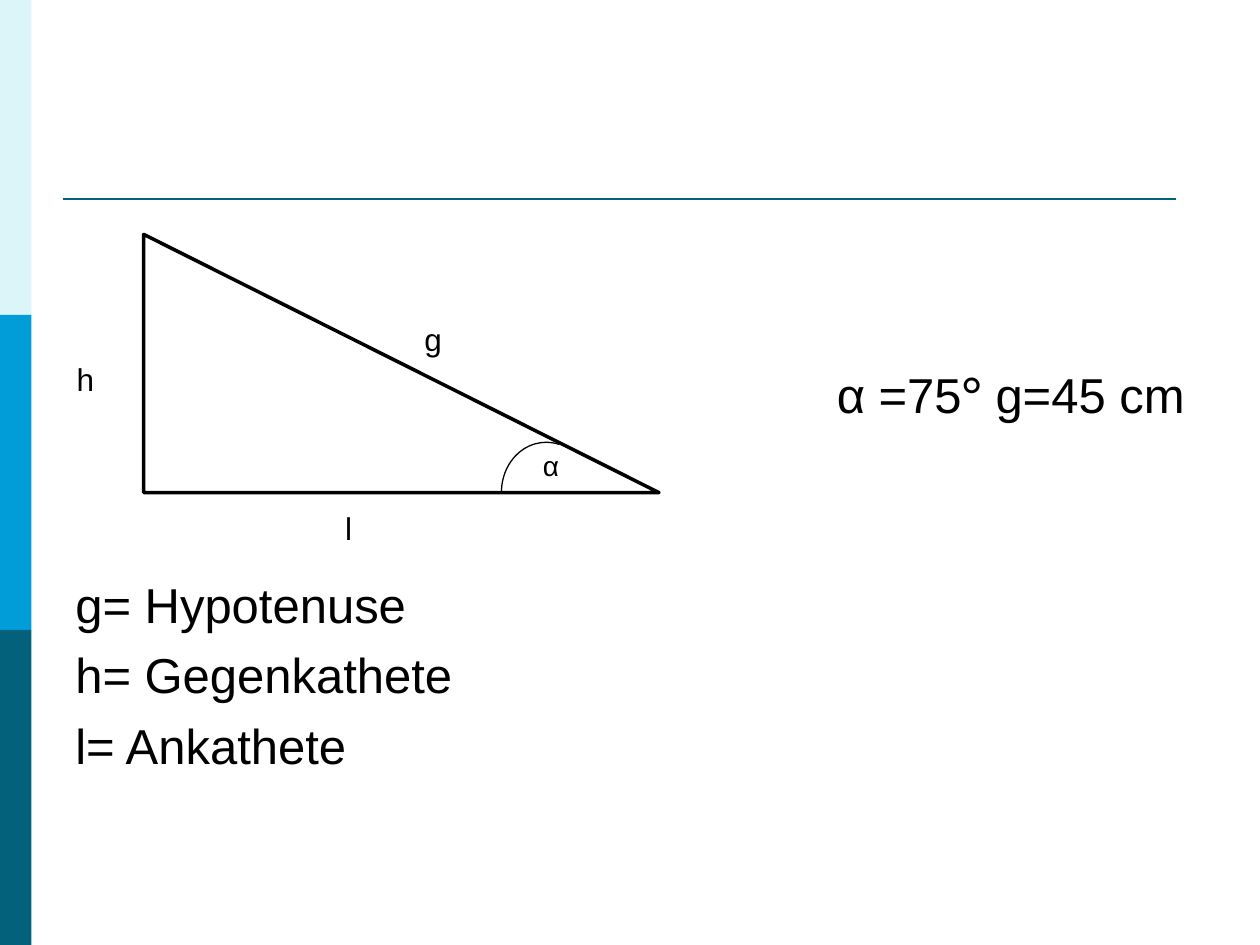
"""Slide with a right triangle, its side names and the given values."""
from dataclasses import dataclass
from typing import NamedTuple

from lxml import etree
from pptx import Presentation
from pptx import util as u
from pptx.dml.color import RGBColor
from pptx.enum import shapes, text
from pptx.oxml.ns import qn

CELL = 0.25
COLUMNS, ROWS = 40, 30


@dataclass(frozen=True)
class Theme:
    ink: str = "000000"
    bands: tuple[str, ...] = ("DBF5F9", "009DD9", "04617B")
    rule: str = "04617B"
    font: str = "Arial"
    degree_font: str = "Lato"
    body: float = 28
    side: float = 18
    angle: float = 16
    paragraph_gap: float = 6.7


class Area(NamedTuple):
    column: float
    row: float
    columns: float
    rows: float


class Run(NamedTuple):
    words: str
    font: str


class Label(NamedTuple):
    area: Area
    size: float
    paragraphs: list[list[Run]]
    align: text.PP_ALIGN = text.PP_ALIGN.LEFT


THEME = Theme()


def cells(count: float) -> u.Length:
    """Return the length of a number of grid cells."""
    return u.Inches(count * CELL)


def plain(words: str) -> list[Run]:
    """Return a paragraph of one run in the main font."""
    return [Run(words, THEME.font)]


def add_figure(slide, kind: shapes.MSO_SHAPE, area: Area, fill: str | None = None,
               line_width: float | None = None):
    """Draw a preset shape with an optional fill and outline."""
    figure = slide.shapes.add_shape(kind, *map(cells, area))
    figure.shadow.inherit = False
    if fill:
        figure.fill.solid()
        figure.fill.fore_color.rgb = RGBColor.from_string(fill)
    else:
        figure.fill.background()
    if line_width:
        figure.line.color.rgb = RGBColor.from_string(THEME.ink)
        figure.line.width = u.Pt(line_width)
    else:
        figure.line.fill.background()
    return figure


def add_rule(slide, start: float, end: float, row: float) -> None:
    """Draw the horizontal rule under the title area."""
    rule = slide.shapes.add_connector(shapes.MSO_CONNECTOR.STRAIGHT,
                                      cells(start), cells(row), cells(end), cells(row))
    rule.line.color.rgb = RGBColor.from_string(THEME.rule)
    rule.line.width = u.Pt(1.5)
    etree.SubElement(rule._element.spPr, qn("a:effectLst"))


def add_label(slide, label: Label) -> None:
    """Write the paragraphs of a label run by run."""
    frame = slide.shapes.add_textbox(*map(cells, label.area)).text_frame
    frame.word_wrap = True
    for index, runs in enumerate(label.paragraphs):
        paragraph = frame.add_paragraph() if index else frame.paragraphs[0]
        paragraph.alignment = label.align
        paragraph.space_before = u.Pt(THEME.paragraph_gap if index else 0)
        for words, font in runs:
            run = paragraph.add_run()
            run.text = words
            run.font.name = font
            run.font.size = u.Pt(label.size)
            run.font.color.rgb = RGBColor.from_string(THEME.ink)


LABELS = [
    Label(Area(2, 11.36, 36, 2.28), THEME.body,
          [[Run("α =75", THEME.font), Run("°", THEME.degree_font),
            Run(" g=45 cm", THEME.font)]], text.PP_ALIGN.RIGHT),
    Label(Area(2, 18.04, 36, 6.6), THEME.body,
          [plain("g= Hypotenuse"), plain("h= Gegenkathete"), plain("l= Ankathete")]),
    Label(Area(13.08, 9.96, 4.72, 1.6), THEME.side, [plain("g")]),
    Label(Area(10.56, 15.96, 2.84, 1.6), THEME.side, [plain("l")]),
    Label(Area(2.04, 11.24, 2.2, 1.6), THEME.side, [plain("h")]),
    Label(Area(16.84, 14.04, 3.76, 1.48), THEME.angle, [plain("α")]),
]


def main() -> None:
    """Build the slide and save it."""
    deck = Presentation()
    deck.slide_width, deck.slide_height = cells(COLUMNS), cells(ROWS)
    slide = deck.slides.add_slide(deck.slide_layouts[6])

    band_rows = ROWS / len(THEME.bands)
    for index, color in enumerate(THEME.bands):
        add_figure(slide, shapes.MSO_SHAPE.RECTANGLE,
                   Area(0, index * band_rows, 1, band_rows), fill=color)
    add_rule(slide, 2, 37.32, 6.32)

    add_figure(slide, shapes.MSO_SHAPE.RIGHT_TRIANGLE,
               Area(4.56, 7.44, 16.36, 8.2), line_width=2)
    angle_arc = add_figure(slide, shapes.MSO_SHAPE.ARC,
                           Area(15.76, 14.2, 3.16, 2.84), line_width=0.75)
    angle_arc.rotation = 270
    angle_arc.adjustments[0] = 162
    angle_arc.adjustments[1] = 9.15

    for label in LABELS:
        add_label(slide, label)
    deck.save("out.pptx")


if __name__ == "__main__":
    main()
